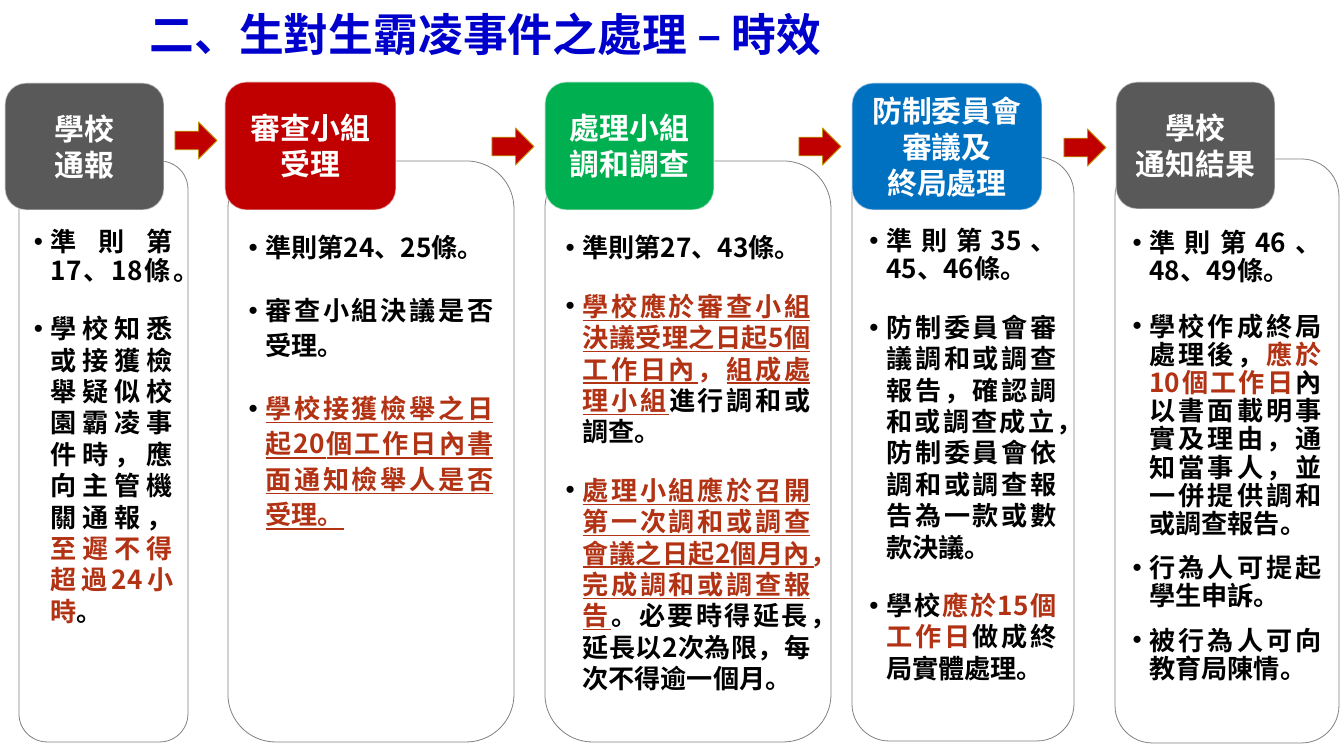
from typing import NamedTuple

from lxml import etree
from pptx import Presentation
from pptx.dml.color import RGBColor
from pptx.enum.shapes import MSO_SHAPE
from pptx.enum.text import MSO_ANCHOR, PP_ALIGN
from pptx.oxml.ns import qn
from pptx.util import Emu, Pt

ROUND, ARROW = MSO_SHAPE.ROUNDED_RECTANGLE, MSO_SHAPE.RIGHT_ARROW
TOP, MIDDLE = MSO_ANCHOR.TOP, MSO_ANCHOR.MIDDLE
CENTER, JUSTIFY = PP_ALIGN.CENTER, PP_ALIGN.JUSTIFY
PX = 914400 / 67.2
INDENT = 17
BODY = "Noto Sans CJK TC"

WHITE = RGBColor(0xFF, 0xFF, 0xFF)
BLACK = RGBColor(0, 0, 0)
NAVY = RGBColor(0, 0, 0xCC)
RUST = RGBColor(0xB2, 0x32, 0x14)
DARK = RGBColor(0x59, 0x59, 0x59)
GREY = RGBColor(0x80, 0x80, 0x80)
PALE = RGBColor(0xF9, 0xF9, 0xF9)
RED = RGBColor(0xC0, 0, 0)
GREEN = RGBColor(0, 0xB0, 0x50)
BLUE = RGBColor(0, 0x70, 0xC0)
GOLD = RGBColor(0xBD, 0x95, 0x06)


class Box(NamedTuple):
    left: int
    top: int
    width: int
    height: int


class Span(NamedTuple):
    text: str
    color: RGBColor = BLACK
    under: bool = False


class Item(NamedTuple):
    spans: list[Span]
    pitch: float | Pt = 1.0
    before: int = 24


class Stage(NamedTuple):
    head: Box
    fill: RGBColor
    title: list[str]
    panel: Box
    items: list[Item]
    font: str = "Cabin"


STAGES = [
    Stage(Box(5, 83, 159, 127), DARK, ["學校", "通報"], Box(19, 161, 169, 581), [
        Item([Span("準則第17、18條。")], 0.9),
        Item([Span("學校知悉或接獲檢舉疑似校園霸凌事件時，應向主管機關通報，"),
              Span("至遲不得超過24小時", RUST), Span("。")]),
    ]),
    Stage(Box(225, 82, 171, 128), RED, ["審查小組受理"], Box(228, 161, 286, 581), [
        Item([Span("準則第24、25條。")], 0.9),
        Item([Span("審查小組決議是否受理。")], Pt(38)),
        Item([Span("學校接獲檢舉之日起20個工作日內書面通知檢舉人是否受理。", RUST, True)], Pt(38)),
    ]),
    Stage(Box(545, 82, 169, 128), GREEN, ["處理小組", "調和調查"], Box(545, 161, 286, 581), [
        Item([Span("準則第27、43條。")], 0.9),
        Item([Span("學校應於審查小組決議受理之日起5個工作日內", RUST, True), Span("，", RUST),
              Span("組成處理小組", RUST, True), Span("進行調和或調查。")]),
        Item([Span("處理小組應於召開第一次調和或調查會議之日起2個月內，完成調和或調查報告", RUST, True),
              Span("。必要時得延長，延長以2次為限，每次不得逾一個月。")]),
    ]),
    Stage(Box(852, 83, 190, 127), BLUE, ["防制委員會", "審議及", "終局處理"],
          Box(852, 157, 222, 584), [
        Item([Span("準則第35、45、46條。")], 0.9),
        Item([Span("防制委員會審議調和或調查報告，確認調和或調查成立，"
                   "防制委員會依調和或調查報告為一款或數款決議。")]),
        Item([Span("學校"), Span("應於15個工作日", RUST), Span("做成終局實體處理。")]),
    ], "Arial"),
    Stage(Box(1116, 82, 159, 127), DARK, ["學校", "通知結果"], Box(1115, 159, 224, 584), [
        Item([Span("準則第46、48、49條。")], 0.9),
        Item([Span("學校作成終局處理後，"), Span("應於10個工作日", RUST),
              Span("內以書面載明事實及理由，通知當事人，並一併提供調和或調查報告。")], 0.9),
        Item([Span("行為人可提起學生申訴。")], 0.9, 12),
        Item([Span("被行為人可向教育局陳情。")], 0.9, 12),
    ]),
]
ARROWS = [(175, 122), (492, 128), (799, 128), (1064, 129)]


def px(size: int) -> Emu:
    """Turn px into EMU."""
    return Emu(round(size * PX))


def style(para, name: str, size: int, color: RGBColor) -> None:
    """Set the bold font of a paragraph."""
    font = para.font
    font.name, font.size, font.bold = name, Pt(size), True
    font.color.rgb = color


def draw(slide, kind, box: Box, fill: RGBColor, edge: RGBColor, width: float):
    """Draw a filled and outlined shape."""
    shape = slide.shapes.add_shape(kind, *map(px, box))
    shape.shadow.inherit = False
    shape.fill.solid()
    shape.fill.fore_color.rgb = fill
    shape.line.color.rgb = edge
    shape.line.width = Pt(width)
    return shape


def bullet(para) -> None:
    """Give a paragraph a hanging black bullet."""
    props = para._p.get_or_add_pPr()
    props.set("marL", str(px(INDENT)))
    props.set("indent", str(-px(INDENT)))
    color = etree.SubElement(props, qn("a:buClr"))
    etree.SubElement(color, qn("a:srgbClr"), val=str(BLACK))
    etree.SubElement(props, qn("a:buFont"), typeface="Arial")
    etree.SubElement(props, qn("a:buChar"), char="•")


def draw_panel(slide, stage: Stage) -> None:
    """Draw the panel with the bulleted rules of a stage."""
    frame = draw(slide, ROUND, stage.panel, WHITE, GREY, 0.85).text_frame
    frame.word_wrap = True
    frame.vertical_anchor = TOP
    frame.margin_top = px(60)
    for i, item in enumerate(stage.items):
        para = frame.add_paragraph() if i else frame.paragraphs[0]
        bullet(para)
        para.alignment = JUSTIFY
        para.line_spacing = item.pitch
        para.space_before = Pt(item.before if i else 0)
        para.space_after = Pt(5)
        style(para, BODY, 28, BLACK)
        for span in item.spans:
            run = para.add_run()
            run.text = span.text
            run.font.color.rgb = span.color
            if span.under:
                run.font.underline = True


def draw_head(slide, stage: Stage) -> None:
    """Draw the coloured heading of a stage."""
    shape = draw(slide, ROUND, stage.head, stage.fill, PALE, 1.35)
    tint = shape.line._ln.find(".//" + qn("a:srgbClr"))
    etree.SubElement(tint, qn("a:alpha"), val="50000")
    frame = shape.text_frame
    frame.word_wrap = True
    frame.vertical_anchor = MIDDLE
    for i, text in enumerate(stage.title):
        para = frame.add_paragraph() if i else frame.paragraphs[0]
        para.alignment = CENTER
        style(para, stage.font, 32, WHITE)
        para.add_run().text = text


def draw_title(slide) -> None:
    """Draw the slide title."""
    frame = slide.shapes.add_textbox(*map(px, Box(143, 3, 1201, 99))).text_frame
    frame.word_wrap = True
    para = frame.paragraphs[0]
    style(para, "Arial", 48, NAVY)
    para.add_run().text = "二、生對生霸凌事件之處理 – 時效"


def main() -> None:
    """Build and save the slide."""
    deck = Presentation()
    deck.slide_width, deck.slide_height = px(1344), px(756)
    slide = deck.slides.add_slide(deck.slide_layouts[6])
    draw_title(slide)
    for stage in STAGES:
        draw_panel(slide, stage)
        draw_head(slide, stage)
    for left, top in ARROWS:
        draw(slide, ARROW, Box(left, top, 42, 37), RED, GOLD, 0.85)
    deck.save("out.pptx")


if __name__ == "__main__":
    main()
